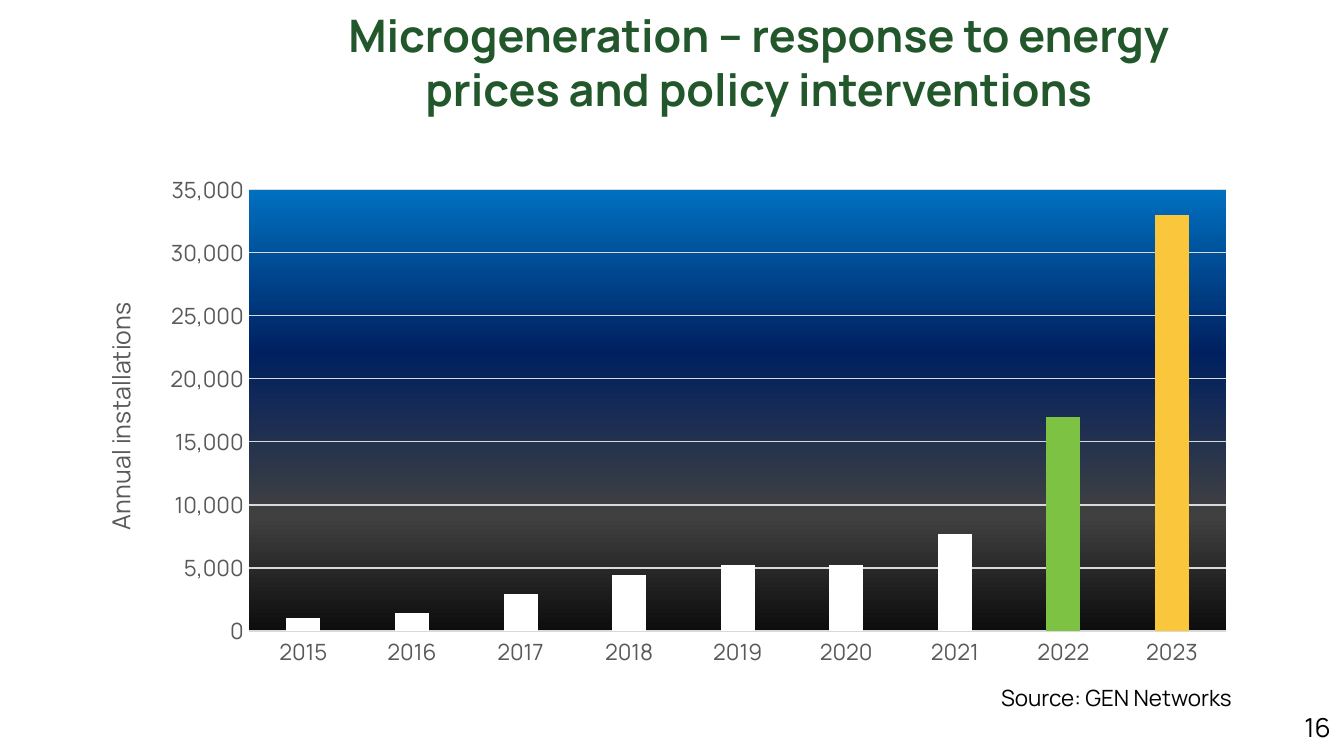
import pptx
import pptx.chart.data
import pptx.dml.color
import pptx.enum.chart
import pptx.enum.text
import pptx.oxml
import pptx.oxml.ns
import pptx.util

WIDTH = pptx.util.Inches(10)
HEIGHT = WIDTH * 9 // 16
FONT = "Manrope"
BLACK = pptx.dml.color.RGBColor(0x00, 0x00, 0x00)
WHITE = pptx.dml.color.RGBColor(0xFF, 0xFF, 0xFF)
HEADING_GREEN = pptx.dml.color.RGBColor(0x22, 0x57, 0x2C)
LABEL_GREY = pptx.dml.color.RGBColor(0x59, 0x59, 0x59)
GRID_GREY = pptx.dml.color.RGBColor(0xD9, 0xD9, 0xD9)
BAR_GREEN = pptx.dml.color.RGBColor(0x7D, 0xC2, 0x42)
BAR_YELLOW = pptx.dml.color.RGBColor(0xF9, 0xC6, 0x3C)
SKY_STOPS = [
    (0, pptx.dml.color.RGBColor(0x00, 0x70, 0xC0)),
    (37, pptx.dml.color.RGBColor(0x00, 0x20, 0x60)),
    (74, pptx.dml.color.RGBColor(0x40, 0x40, 0x40)),
    (100, pptx.dml.color.RGBColor(0x0D, 0x0D, 0x0D)),
]
INSTALLATIONS = dict(zip(
    range(2015, 2024),
    [1000, 1400, 2900, 4400, 5200, 5200, 7700, 17000, 33000],
))
HIGHLIGHTS = {2022: BAR_GREEN, 2023: BAR_YELLOW}


def place(left, top, width, height):
    """Turn percentages of the slide's size into lengths."""
    return (int(WIDTH * left / 100), int(HEIGHT * top / 100),
            int(WIDTH * width / 100), int(HEIGHT * height / 100))


def style_font(font, size, color, bold=False):
    """Set the face, size, colour and weight of a font."""
    font.name = FONT
    font.size = pptx.util.Pt(size)
    font.color.rgb = color
    font.bold = bold


def add_text(slide, box, words, size, color, align, anchor, inset=0.1, bold=False):
    """Add a wrapped text box with one paragraph."""
    frame = slide.shapes.add_textbox(*box).text_frame
    frame.word_wrap = True
    frame.vertical_anchor = anchor
    frame.margin_left = frame.margin_right = pptx.util.Inches(0.1)
    frame.margin_top = frame.margin_bottom = pptx.util.Inches(inset)
    paragraph = frame.paragraphs[0]
    paragraph.alignment = align
    run = paragraph.add_run()
    run.text = words
    style_font(run.font, size, color, bold)


def set_layout(parent, index, **shares):
    """Fix the place of a chart part by shares of the chart's size."""
    for old in parent.findall(pptx.oxml.ns.qn("c:layout")):
        parent.remove(old)
    target = '<c:layoutTarget val="inner"/>' if "w" in shares else ""
    modes = "".join(f'<c:{side}Mode val="edge"/>' for side in "xy")
    sizes = "".join(f'<c:{side} val="{share}"/>' for side, share in shares.items())
    parent.insert(index, pptx.oxml.parse_xml(
        f'<c:layout {pptx.oxml.ns.nsdecls("c")}><c:manualLayout>'
        f'{target}{modes}{sizes}</c:manualLayout></c:layout>'))


def fill_plot_area(plot_area, stops):
    """Fill the plot area with a gradient from top to bottom."""
    marks = "".join(
        f'<a:gs pos="{share * 1000}"><a:srgbClr val="{color}"/></a:gs>'
        for share, color in stops)
    plot_area.append(pptx.oxml.parse_xml(
        f'<c:spPr {pptx.oxml.ns.nsdecls("c", "a")}><a:gradFill><a:gsLst>{marks}</a:gsLst>'
        '<a:lin ang="5400000" scaled="0"/></a:gradFill></c:spPr>'))


def style_axis(axis):
    """Give an axis grey labels and no tick marks."""
    style_font(axis.tick_labels.font, 12, LABEL_GREY)
    axis.major_tick_mark = axis.minor_tick_mark = pptx.enum.chart.XL_TICK_MARK.NONE


def style_line(line):
    """Draw a thin light grey line."""
    line.color.rgb = GRID_GREY
    line.width = pptx.util.Pt(0.75)


def style_axes(chart):
    """Set up the year axis and the installations axis."""
    years, counts = chart.category_axis, chart.value_axis
    style_axis(years)
    style_axis(counts)
    style_line(years.format.line)
    counts.format.line.fill.background()
    style_line(counts.major_gridlines.format.line)
    counts.minimum_scale, counts.maximum_scale, counts.major_unit = 0, 35000, 5000
    counts.tick_labels.number_format = "#,##0"
    counts.tick_labels.number_format_is_linked = False
    caption = counts.axis_title.text_frame.paragraphs[0].add_run()
    caption.text = "Annual installations"
    style_font(caption.font, 13.3, LABEL_GREY)
    set_layout(counts.axis_title._element, 1, x=0.02, y=0.26)


def add_installations_chart(slide, box):
    """Add the column chart of annual installations."""
    data = pptx.chart.data.CategoryChartData(number_format="#,##0")
    data.categories = [str(year) for year in INSTALLATIONS]
    data.add_series("Series 1", INSTALLATIONS.values())
    chart = slide.shapes.add_chart(
        pptx.enum.chart.XL_CHART_TYPE.COLUMN_CLUSTERED, *box, data).chart
    style_font(chart.font, 10, BLACK)
    chart.has_legend = chart.has_title = False
    columns = chart.plots[0]
    columns.gap_width, columns.overlap, columns.vary_by_categories = 219, -27, False
    series = columns.series[0]
    series.format.fill.solid()
    series.format.fill.fore_color.rgb = WHITE
    for position, year in enumerate(INSTALLATIONS):
        if year in HIGHLIGHTS:
            fill = series.points[position].format.fill
            fill.solid()
            fill.fore_color.rgb = HIGHLIGHTS[year]
    style_axes(chart)
    plot_area = chart._chartSpace.chart.plotArea
    set_layout(plot_area, 0, x=0.15, y=0.05, w=0.83, h=0.86)
    fill_plot_area(plot_area, SKY_STOPS)


def main():
    """Build the microgeneration slide."""
    deck = pptx.Presentation()
    deck.slide_width, deck.slide_height = WIDTH, HEIGHT
    slide = deck.slides.add_slide(deck.slide_layouts[6])
    align, anchor = pptx.enum.text.PP_ALIGN, pptx.enum.text.MSO_ANCHOR
    add_text(slide, place(73.5, 89.6, 30.7, 5.3), "Source: GEN Networks",
             12, BLACK, align.LEFT, anchor.TOP, inset=0.05)
    add_text(slide, place(95.2, 92.3, 4.8, 7.7), "16",
             14, BLACK, align.RIGHT, anchor.MIDDLE)
    add_text(slide, place(21.6, 3.5, 69.7, 13.5),
             "Microgeneration – response to energy prices and policy interventions",
             24, HEADING_GREEN, align.CENTER, anchor.BOTTOM, bold=True)
    add_installations_chart(slide, place(5.4, 21.7, 87.6, 67.9))
    deck.save("out.pptx")


if __name__ == "__main__":
    main()
